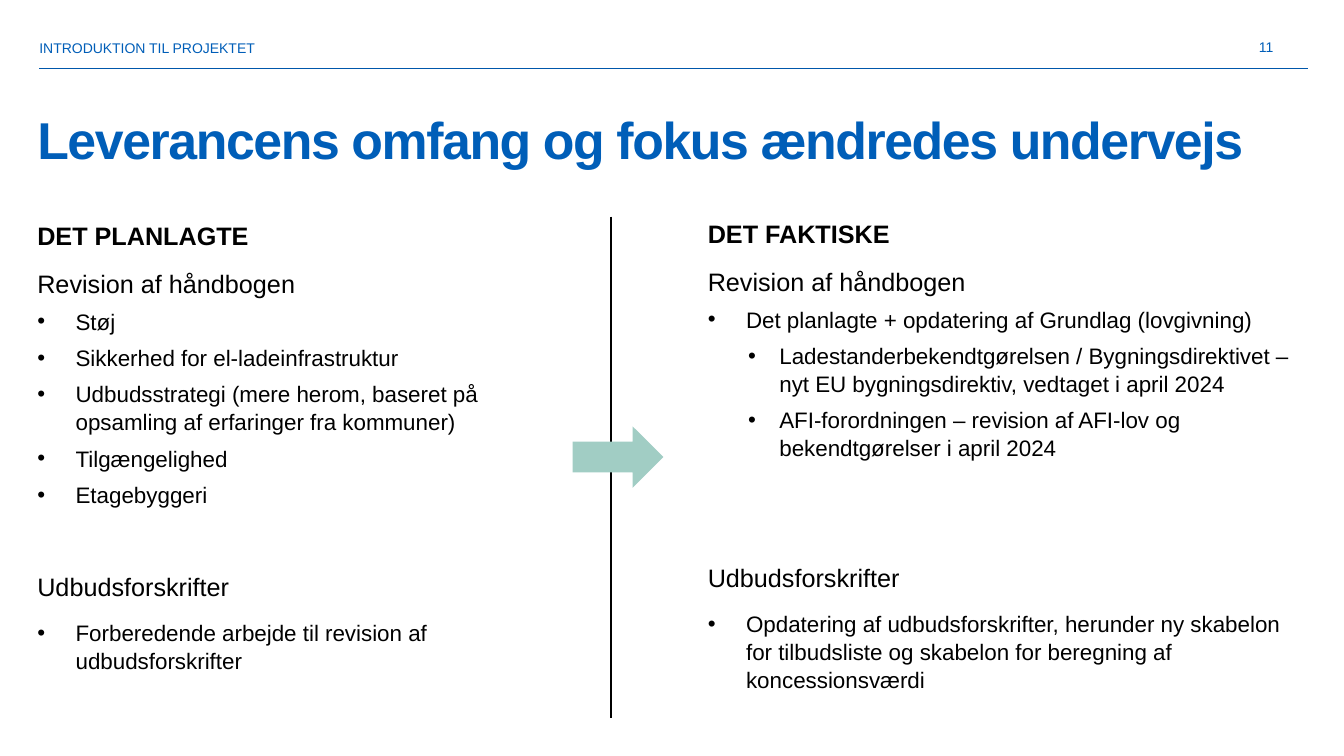
from pptx import Presentation
from pptx.dml.color import RGBColor
from pptx.enum.shapes import MSO_CONNECTOR, MSO_SHAPE
from pptx.enum.text import MSO_ANCHOR, PP_ALIGN
from pptx.oxml.ns import qn
from pptx.util import Inches, Pt
from lxml import etree

STRAIGHT = MSO_CONNECTOR.STRAIGHT
RIGHT_ARROW = MSO_SHAPE.RIGHT_ARROW
TOP, MIDDLE = MSO_ANCHOR.TOP, MSO_ANCHOR.MIDDLE
LEFT, RIGHT = PP_ALIGN.LEFT, PP_ALIGN.RIGHT

COLORS = {"blue": "005EB8", "rule": "0057AB", "black": "000000", "arrow": "A1CDC4"}
FONT = "Arial"
INDENTS = {1: (0.38, -0.38), 2: (0.71, -0.31)}
STYLES = {
    "header": {"size": 18, "bold": True, "before": 0, "level": 0},
    "topic": {"size": 18, "bold": False, "before": 6, "level": 0},
    "bullet": {"size": 16, "bold": False, "before": 0, "level": 1},
    "spaced bullet": {"size": 16, "bold": False, "before": 6, "level": 1},
    "sub-bullet": {"size": 16, "bold": False, "before": 0, "level": 2},
}

PLANNED = [
    ("header", "DET PLANLAGTE"),
    ("topic", "Revision af håndbogen"),
    ("bullet", "Støj"),
    ("bullet", "Sikkerhed for el-ladeinfrastruktur"),
    ("bullet", "Udbudsstrategi (mere herom, baseret på opsamling af erfaringer fra kommuner)"),
    ("bullet", "Tilgængelighed"),
    ("bullet", "Etagebyggeri"),
    ("topic", "Udbudsforskrifter"),
    ("spaced bullet", "Forberedende arbejde til revision af udbudsforskrifter"),
]
ACTUAL = [
    ("header", "DET FAKTISKE"),
    ("topic", "Revision af håndbogen"),
    ("bullet", "Det planlagte + opdatering af Grundlag (lovgivning)"),
    ("sub-bullet", "Ladestanderbekendtgørelsen / Bygningsdirektivet – nyt EU bygningsdirektiv, "
                   "vedtaget i april 2024"),
    ("sub-bullet", "AFI-forordningen – revision af AFI-lov og bekendtgørelser i april 2024"),
    ("topic", "Udbudsforskrifter"),
    ("spaced bullet", "Opdatering af udbudsforskrifter, herunder ny skabelon for tilbudsliste "
                      "og skabelon for beregning af koncessionsværdi"),
]


def add_text_frame(page, left, top, width, height, anchor):
    """Add a wrapping text box without margins and return its frame."""
    box = page.shapes.add_textbox(Inches(left), Inches(top), Inches(width), Inches(height))
    frame = box.text_frame
    values = {"word_wrap": True, "vertical_anchor": anchor, "margin_left": 0,
              "margin_top": 0, "margin_right": 0, "margin_bottom": 0}
    for name, value in values.items():
        setattr(frame, name, value)
    return frame


def add_span(para, text, size, color, bold=False):
    """Add a formatted run to a paragraph and return it."""
    span = para.add_run()
    span.text = text
    for name, value in {"name": FONT, "size": Pt(size), "bold": bold}.items():
        setattr(span.font, name, value)
    span.font.color.rgb = RGBColor.from_string(COLORS[color])
    return span


def add_line(page, start, end, color, width):
    """Draw a straight line without a shadow."""
    line = page.shapes.add_connector(STRAIGHT, *(Inches(value) for value in start + end))
    line.line.color.rgb = RGBColor.from_string(COLORS[color])
    line.line.width = Pt(width)
    etree.SubElement(line._element.spPr, qn("a:effectLst"))


def add_bullet(para, level):
    """Give a paragraph a hanging bullet at the given level."""
    margin, hang = INDENTS[level]
    properties = para._p.get_or_add_pPr()
    properties.set("marL", str(Inches(margin)))
    properties.set("indent", str(Inches(hang)))
    etree.SubElement(properties, qn("a:buFont")).set("typeface", FONT)
    etree.SubElement(properties, qn("a:buChar")).set("char", "•")


def add_header(page, left, top, width):
    """Place the section name, page number and rule along the top."""
    labels = [
        ("INTRODUKTION TIL PROJEKTET", left, top + 0.01, 10.78, LEFT),
        ("11", left + 11.87, top, 0.37, RIGHT),
    ]
    for text, label_left, label_top, label_width, align in labels:
        frame = add_text_frame(page, label_left, label_top, label_width, 0.19, MIDDLE)
        para = frame.paragraphs[0]
        para.alignment = align
        add_span(para, text, 10, "blue")
    add_line(page, (left, top + 0.31), (left + width, top + 0.31), "rule", 1)


def add_title(page, left, top, width, height):
    """Place the slide title with tight letter spacing."""
    para = add_text_frame(page, left, top, width, height, MIDDLE).paragraphs[0]
    para.line_spacing = 0.88
    span = add_span(para, "Leverancens omfang og fokus ændredes undervejs", 37, "blue", True)
    span._r.get_or_add_rPr().set("spc", "-100")


def add_column(page, left, top, width, height, rows, section_gap):
    """Fill a column, with a wide gap before its second topic."""
    frame = add_text_frame(page, left, top, width, height, TOP)
    for index, (kind, text) in enumerate(rows):
        style = STYLES[kind]
        para = frame.paragraphs[0] if index == 0 else frame.add_paragraph()
        new_section = kind == "topic" and index > 1
        before = section_gap if new_section else style["before"]
        values = {"space_before": Pt(before), "space_after": Pt(6), "line_spacing": 1.04}
        for name, value in values.items():
            setattr(para, name, value)
        if style["level"]:
            add_bullet(para, style["level"])
        add_span(para, text, style["size"], "black", style["bold"])


def add_divider(page, left, top, height):
    """Draw the vertical divider with the arrow across it."""
    add_line(page, (left, top), (left, top + height), "black", 2)
    arrow = page.shapes.add_shape(RIGHT_ARROW, Inches(left - 0.38), Inches(top + 2.08),
                                  Inches(0.9), Inches(0.61))
    arrow.shadow.inherit = False
    arrow.fill.solid()
    arrow.fill.fore_color.rgb = RGBColor.from_string(COLORS["arrow"])
    arrow.line.fill.background()


def main():
    """Build and save the slide."""
    deck = Presentation()
    deck.slide_width, deck.slide_height = Inches(13.33), Inches(7.5)
    page = deck.slides.add_slide(deck.slide_layouts[6])
    add_header(page, 0.39, 0.37, 12.58)
    add_title(page, 0.37, 0.89, 12.6, 1.06)
    add_column(page, 0.37, 2.17, 5.28, 4.96, PLANNED, 38)
    add_column(page, 7.02, 2.15, 5.94, 4.96, ACTUAL, 65)
    add_divider(page, 6.06, 2.15, 4.97)
    deck.save("out.pptx")


if __name__ == "__main__":
    main()
